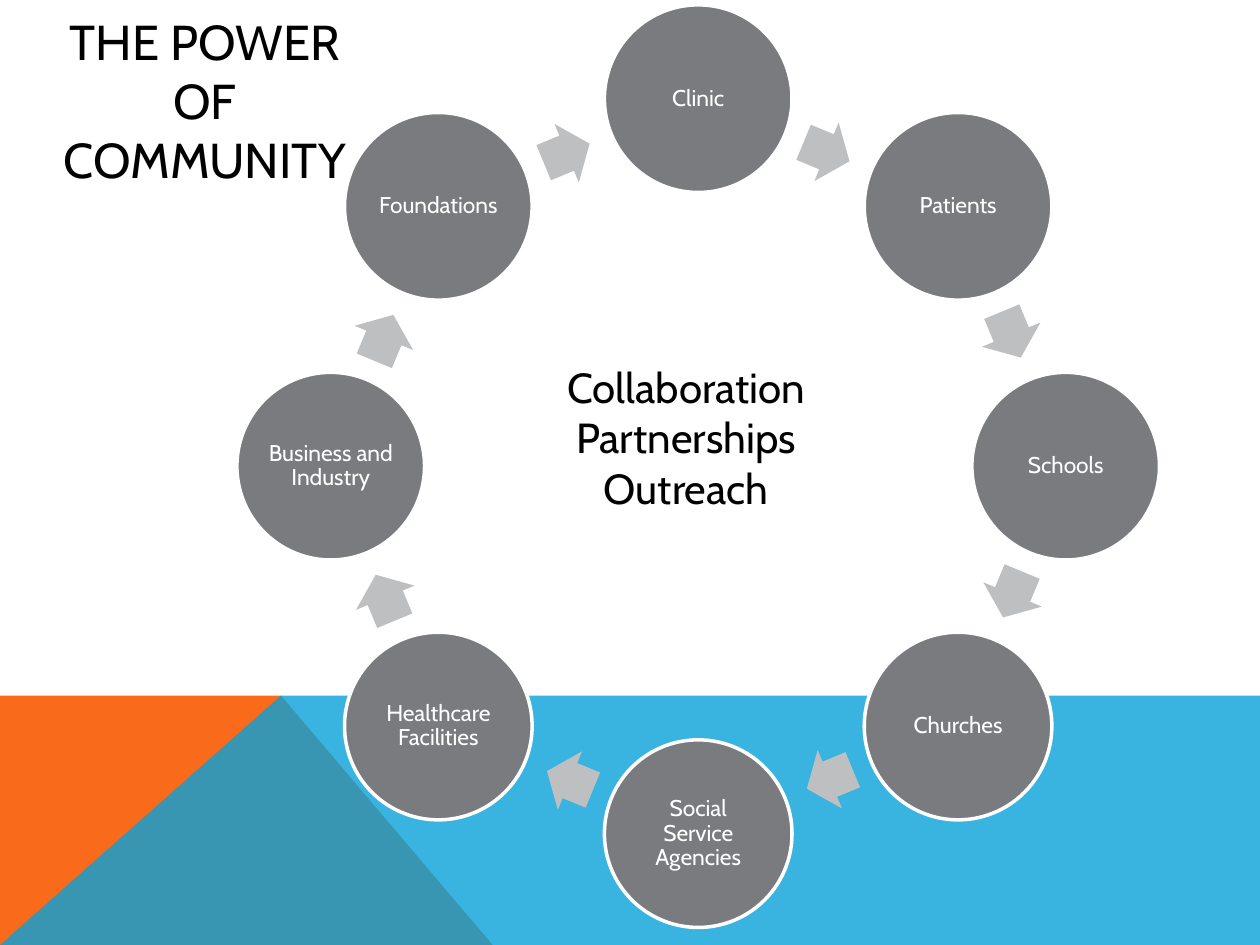
from math import cos, radians, sin

from lxml.etree import SubElement
from pptx import Presentation
from pptx.dml.color import RGBColor
from pptx.enum.shapes import MSO_SHAPE
from pptx.enum.text import MSO_ANCHOR, PP_ALIGN
from pptx.oxml.ns import qn
from pptx.util import Pt

FONT = "Cabin"
PARTNERS = ["Clinic", "Patients", "Schools", "Churches",
            "Social Service Agencies", "Healthcare Facilities",
            "Business and Industry", "Foundations"]
NODE = 107.2
ARROW_W, ARROW_H = 28.4, 36.2


def rgb(color):
    return RGBColor.from_string(color)


def paint(sp, fill, line=None, alpha=None):
    sp.shadow.inherit = False
    sp.fill.solid()
    sp.fill.fore_color.rgb = rgb(fill)
    if alpha is not None:
        clr = sp.fill._xPr.find(qn("a:solidFill"))[0]
        SubElement(clr, qn("a:alpha"), val=str(alpha * 1000))
    if line:
        sp.line.color.rgb = rgb(line)
        sp.line.width = Pt(2)
    else:
        sp.line.fill.background()


def write(sp, lines, size, color, anchor, spacing=None, inset=None):
    tf = sp.text_frame
    tf.word_wrap = True
    tf.vertical_anchor = anchor
    if inset is not None:
        for side in ("left", "top", "right", "bottom"):
            setattr(tf, f"margin_{side}", Pt(inset))
    for i, line in enumerate(lines):
        p = tf.paragraphs[0] if i == 0 else tf.add_paragraph()
        p.alignment = PP_ALIGN.CENTER
        if spacing:
            p.line_spacing = spacing
        r = p.add_run()
        r.text = line
        for name, value in {"name": FONT, "size": Pt(size)}.items():
            setattr(r.font, name, value)
        r.font.color.rgb = rgb(color)


def add_polygon(s, points, fill, alpha=None):
    pts = [(Pt(x), Pt(y)) for x, y in points]
    builder = s.shapes.build_freeform(*pts[0])
    builder.add_line_segments(pts[1:], close=True)
    paint(builder.convert_to_shape(), fill, alpha=alpha)


def add_footer_band(s, left, top, width, height):
    right, bottom = left + width, top + height
    peak = (left + 160.6, top)
    # Orange wedge, then the translucent blue band over it
    add_polygon(s, [(left, bottom), (left, top), peak,
                    (left + 281.5, bottom)], "F96A1B")
    add_polygon(s, [(left, bottom), peak, (right, top),
                    (right, bottom)], "08A1D9", alpha=80)


def add_text(s, box, lines, size, anchor):
    sp = s.shapes.add_textbox(*map(Pt, box))
    write(sp, lines, size, "000000", anchor)


def add_cycle(s, left, top, size):
    ring = (size - NODE) / 2
    cx, cy = left + size / 2, top + size / 2
    step = 360 / len(PARTNERS)
    mid_ring = ring * cos(radians(step / 2))

    for i, name in enumerate(PARTNERS):
        # Partner circle, clockwise from the top
        a = radians(i * step)
        x, y = cx + ring * sin(a), cy - ring * cos(a)
        sp = s.shapes.add_shape(MSO_SHAPE.OVAL, Pt(x - NODE / 2),
                                Pt(y - NODE / 2), Pt(NODE), Pt(NODE))
        paint(sp, "797B7E", "FFFFFF")
        write(sp, [name], 13, "FFFFFF", MSO_ANCHOR.MIDDLE, 0.9, 1.3)

        # Arrow between neighbours, set 1 pt back along its direction
        turn = (i + 0.5) * step
        a = radians(turn)
        x = cx + mid_ring * sin(a) - cos(a)
        y = cy - mid_ring * cos(a) - sin(a)
        sp = s.shapes.add_shape(MSO_SHAPE.RIGHT_ARROW, Pt(x - ARROW_W / 2),
                                Pt(y - ARROW_H / 2), Pt(ARROW_W), Pt(ARROW_H))
        sp.rotation = turn
        sp.adjustments[0], sp.adjustments[1] = 0.6, 0.5
        paint(sp, "BEBFC0")


def main():
    prs = Presentation()
    prs.slide_width, prs.slide_height = Pt(720), Pt(540)
    s = prs.slides.add_slide(prs.slide_layouts[6])
    add_footer_band(s, 0, 397.5, 720, 142.5)
    # Title
    add_text(s, (12, 12, 210, 90), ["THE POWER OF COMMUNITY"], 28,
             MSO_ANCHOR.MIDDLE)
    add_cycle(s, 135.4, 2.8, 527.2)
    # Centre message
    add_text(s, (293.8, 203, 196.6, 94.5),
             ["Collaboration", "Partnerships", "Outreach"], 24,
             MSO_ANCHOR.TOP)
    prs.save("out.pptx")


if __name__ == "__main__":
    main()
